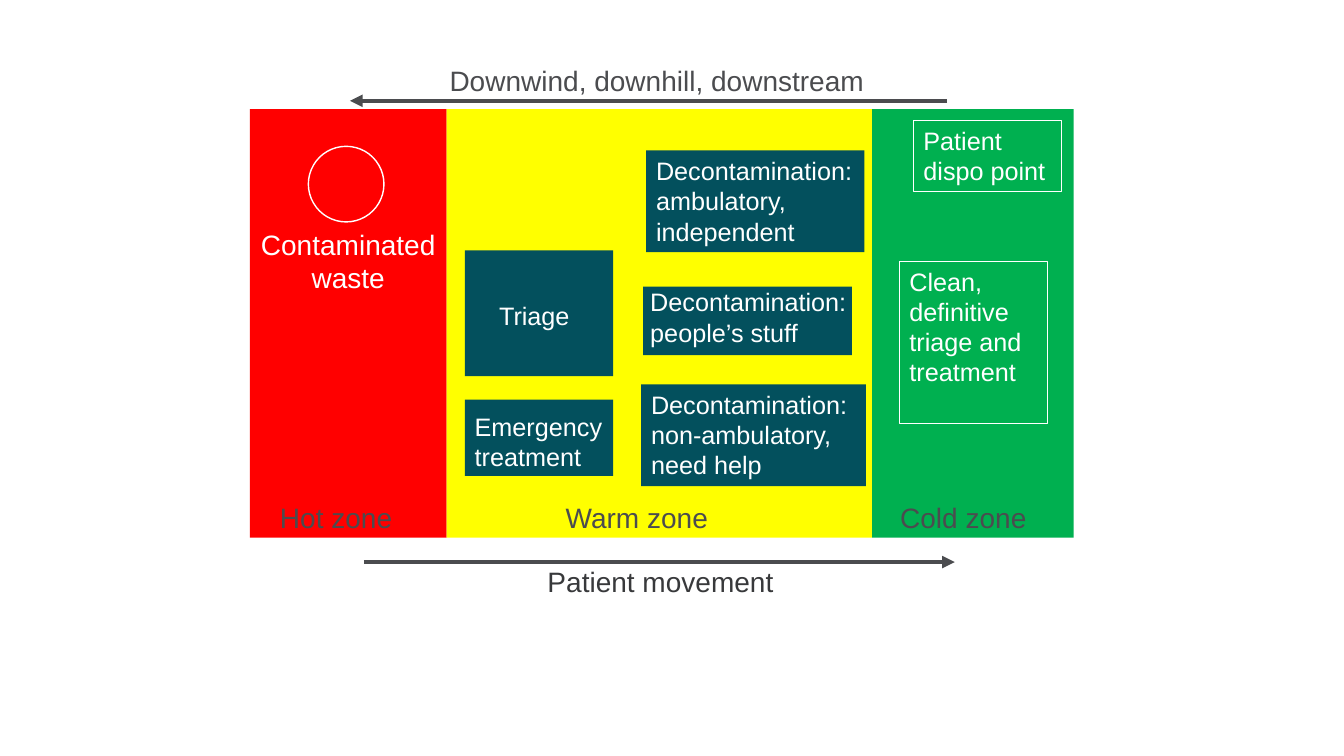
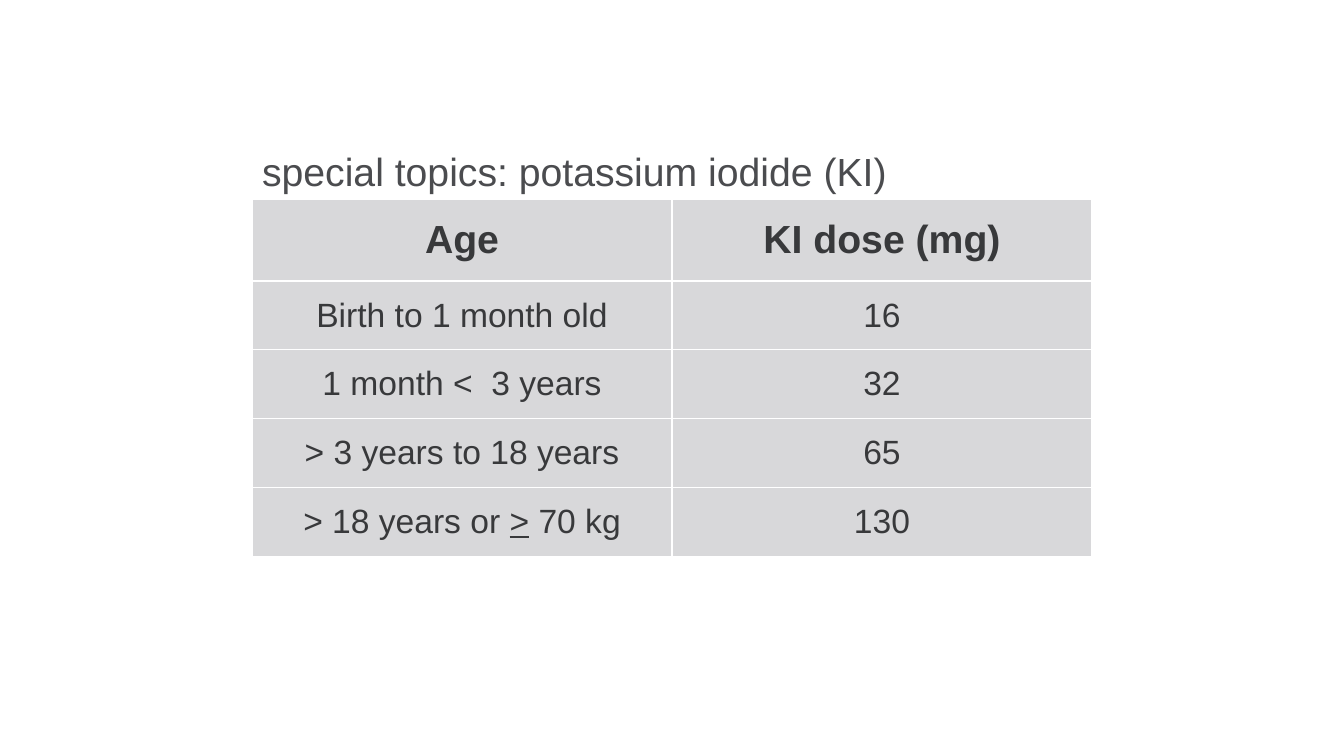
from lxml.etree import SubElement
from pptx import Presentation
from pptx.dml.color import RGBColor
from pptx.enum.shapes import MSO_CONNECTOR as Link, MSO_SHAPE as Kind
from pptx.enum.text import MSO_ANCHOR as Anchor, MSO_AUTO_SIZE as Auto, PP_ALIGN as Align
from pptx.oxml.ns import qn
from pptx.util import Pt

FONT = "Arial"
GREY, DARK, PALE, WHITE = "4B4C4F", "38393B", "D8D8DA", "FFFFFF"
RED, YELLOW, GREEN, TEAL = "FF0000", "FFFF00", "00B050", "03505D"


def rgb(code):
    return RGBColor.from_string(code)


def pts(*vals):
    return [Pt(v) for v in vals]


def style(para, size, color, align=Align.LEFT, bold=False):
    para.alignment = align
    for run in para.runs:
        font = run.font
        font.name, font.size, font.bold = FONT, Pt(size), bold
        font.color.rgb = rgb(color)


def write(frame, text, size, color, inset=(7.2, 3.6, 0, 3.6),
          anchor=Anchor.TOP, align=Align.LEFT):
    """Fill a text frame; inset is left, top, right, bottom."""
    frame.text = text
    frame.word_wrap = True
    frame.auto_size = Auto.NONE
    frame.vertical_anchor = anchor
    (frame.margin_left, frame.margin_top,
     frame.margin_right, frame.margin_bottom) = pts(*inset)
    style(frame.paragraphs[0], size, color, align)


def shape(slide, box, fill=None, line=None, width=0.75, kind=Kind.RECTANGLE):
    item = slide.shapes.add_shape(kind, *pts(*box))
    item.shadow.inherit = False
    if fill:
        item.fill.solid()
        item.fill.fore_color.rgb = rgb(fill)
    else:
        item.fill.background()
    if line:
        item.line.color.rgb = rgb(line)
        item.line.width = Pt(width)
    else:
        item.line.fill.background()
    return item


def label(slide, box, text, color, **look):
    area = slide.shapes.add_textbox(*pts(*box))
    write(area.text_frame, text, 20, color, **look)


def arrow(slide, start, end, y):
    item = slide.shapes.add_connector(Link.STRAIGHT, *pts(start, y, end, y))
    item.line.color.rgb = rgb(GREY)
    item.line.width = Pt(3)
    props = item._element.spPr
    SubElement(props.find(qn("a:ln")), qn("a:tailEnd"), type="triangle")
    SubElement(props, qn("a:effectLst"))


def zone(slide, box, fill, name, indent):
    """Draw a coloured band with its name at the foot."""
    band = shape(slide, box, fill)
    write(band.text_frame, name, 20, GREY, (indent, 0, 0, 2.5), Anchor.BOTTOM)


def station(slide, box, text, fill=None, line=None, **look):
    item = shape(slide, box, fill, line)
    write(item.text_frame, text, 18, WHITE, **look)


def hot(slide, box):
    x, y, w, _ = box
    zone(slide, box, RED, "Hot zone", 21.5)
    shape(slide, (x + 41.75, y + 26.5, 54, 54), RED, WHITE, 1, Kind.OVAL)
    label(slide, (x, y + 80.75, w, 55), "Contaminated waste", WHITE,
          inset=(0, 3.6, 0, 3.6), align=Align.CENTER)


def warm(slide, box):
    x, y = box[:2]
    zone(slide, box, YELLOW, "Warm zone", 85)
    stops = [
        (13, 100.75, 106, 90, "Triage", (24.5, 36)),
        (13, 207.5, 106, 54.5, "Emergency treatment", (7.2, 8)),
        (142.5, 29.5, 156, 72.75, "Decontamination: ambulatory, independent", (7.2, 3.6)),
        (140.5, 126.75, 149, 49, "Decontamination: people’s stuff", (5, 0)),
        (139, 196.5, 160.5, 72.75, "Decontamination: non-ambulatory, need help", (7.2, 3.6)),
    ]
    for left, top, w, h, text, pad in stops:
        station(slide, (x + left, y + top, w, h), text, TEAL, inset=(*pad, 0, 0))


def cold(slide, box):
    x, y = box[:2]
    zone(slide, box, GREEN, "Cold zone", 20)
    station(slide, (x + 19.5, y + 108.5, 106, 116),
            "Clean, definitive triage and treatment", line=WHITE)
    station(slide, (x + 29.5, y + 8, 106, 51), "Patient dispo point", line=WHITE)


def zones(deck, x, y, h):
    slide = deck.slides.add_slide(deck.slide_layouts[6])
    left = x
    for draw, w in ((hot, 140.5), (warm, 304), (cold, 144)):
        draw(slide, (left, y, w, h))
        left += w
    arrow(slide, x + 498, x + 71.5, y - 6)
    label(slide, (x + 135.5, y - 36, 322, 32), "Downwind, downhill, downstream", GREY)
    arrow(slide, x + 81.5, x + 503.5, y + h + 17.5)
    label(slide, (x + 205.5, y + h + 16, 232, 32), "Patient movement", DARK)


def edge(cell):
    """Give a cell thin white borders; call before setting its fill."""
    props = cell._tc.get_or_add_tcPr()
    for side in ("lnL", "lnR", "lnT", "lnB"):
        line = SubElement(props, qn(f"a:{side}"), w=str(Pt(1)))
        fill = SubElement(line, qn("a:solidFill"))
        SubElement(fill, qn("a:srgbClr"), val=WHITE)


def dose(cell, text, head):
    """Fill a cell; text between underscores is underlined."""
    edge(cell)
    cell.fill.solid()
    cell.fill.fore_color.rgb = rgb(PALE)
    cell.vertical_anchor = Anchor.MIDDLE
    para = cell.text_frame.paragraphs[0]
    for i, part in enumerate(text.split("_")):
        run = para.add_run()
        run.text = part
        if i % 2:
            run.font.underline = True
    style(para, 28 if head else 24, DARK, Align.CENTER, head)


def doses(deck, x, y, w):
    slide = deck.slides.add_slide(deck.slide_layouts[5])
    title = slide.shapes.title
    title.left, title.top, title.width, title.height = pts(x, y - 41, 510, 41)
    write(title.text_frame, "special topics: potassium iodide (KI)", 28, GREY)
    rows = [
        ("Age", "KI dose (mg)"),
        ("Birth to 1 month old", "16"),
        ("1 month <  3 years", "32"),
        ("> 3 years to 18 years", "65"),
        ("> 18 years or _>_ 70 kg", "130"),
    ]
    highs = [58.25] + [49.15] * (len(rows) - 1)
    grid = slide.shapes.add_table(len(rows), 2, *pts(x, y, w, sum(highs))).table
    grid.horz_banding = False
    for col in grid.columns:
        col.width = Pt(w / 2)
    for r, (row, high) in enumerate(zip(rows, highs)):
        grid.rows[r].height = Pt(high)
        for c, text in enumerate(row):
            dose(grid.cell(r, c), text, r == 0)


def main():
    deck = Presentation()
    deck.slide_width, deck.slide_height = pts(960, 540)
    zones(deck, 178.5, 78, 306)
    doses(deck, 180, 142.5, 600)
    deck.save("out.pptx")


if __name__ == "__main__":
    main()
